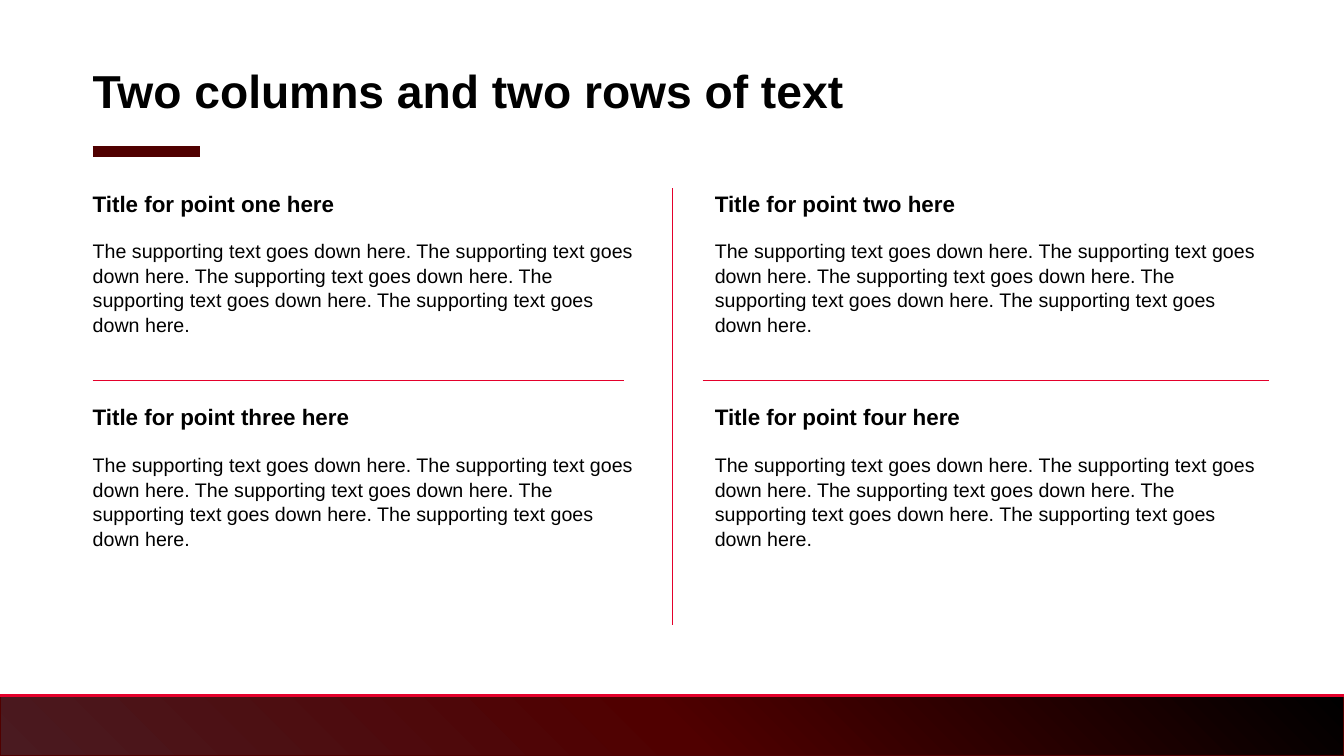
from copy import deepcopy

from lxml.etree import SubElement
from pptx import Presentation
from pptx.dml.color import RGBColor
from pptx.enum.shapes import MSO_CONNECTOR, MSO_SHAPE
from pptx.enum.text import MSO_ANCHOR
from pptx.oxml.ns import qn
from pptx.util import Inches, Pt

COLORS = {"text": "000000", "maroon": "500000", "plum": "4A1A20", "red": "E4002B"}
FONT = "Arial"
WIDTH, HEIGHT = 13.33, 7.5
LEFT = 0.92
COLUMNS = (LEFT, 7.09)
ROWS = (1.87, 3.99)
COLUMN_WIDTH = 5.37
BAND_TOP = 6.9
POINTS = ("one", "two", "three", "four")
SUPPORTING_TEXT = " ".join(["The supporting text goes down here."] * 5)


def color(name):
    return RGBColor.from_string(COLORS[name])


def add_text(slide, text, left, top, width, height, size, bold=False, spacing=1.05):
    text_frame = slide.shapes.add_textbox(
        Inches(left), Inches(top), Inches(width), Inches(height)
    ).text_frame
    text_frame.margin_left = text_frame.margin_right = 0
    text_frame.margin_top = text_frame.margin_bottom = 0
    text_frame.word_wrap = True
    text_frame.vertical_anchor = MSO_ANCHOR.TOP
    text_frame.text = text
    paragraph = text_frame.paragraphs[0]
    paragraph.line_spacing = spacing
    font = paragraph.runs[0].font
    font.name, font.size, font.bold = FONT, Pt(size), bold
    font.color.rgb = color("text")


def add_line(slide, start, end, line_color, width):
    connector = slide.shapes.add_connector(
        MSO_CONNECTOR.STRAIGHT,
        Inches(start[0]), Inches(start[1]), Inches(end[0]), Inches(end[1]),
    )
    connector.line.color.rgb = color(line_color)
    connector.line.width = Pt(width)
    SubElement(connector._element.spPr, qn("a:effectLst"))


def add_footer_band(slide):
    shape = slide.shapes.add_shape(
        MSO_SHAPE.RECTANGLE,
        0, Inches(BAND_TOP), Inches(WIDTH), Inches(HEIGHT - BAND_TOP),
    )
    shape.shadow.inherit = False
    shape.line.color.rgb = color("maroon")
    shape.line.width = Pt(1.5)
    shape.fill.gradient()
    shape.fill.gradient_angle = 225
    # The default gradient has two stops; add a third
    stop_list = shape._element.spPr.find(qn("a:gradFill")).find(qn("a:gsLst"))
    stop_list.append(deepcopy(stop_list[-1]))
    names = ("text", "maroon", "plum")
    for stop, name, position in zip(shape.fill.gradient_stops, names, (0, 0.5, 1)):
        stop.color.rgb = color(name)
        stop.position = position
    add_line(slide, (0, BAND_TOP), (WIDTH, BAND_TOP), "red", 1.5)


def add_point(slide, number, left, top):
    add_text(slide, f"Title for point {number} here",
             left, top, COLUMN_WIDTH, 0.46, 16, bold=True)
    add_text(slide, SUPPORTING_TEXT, left, top + 0.49, COLUMN_WIDTH, 1.15, 14)


def main():
    presentation = Presentation()
    presentation.slide_width = Inches(WIDTH)
    presentation.slide_height = Inches(HEIGHT)
    slide = presentation.slides.add_slide(presentation.slide_layouts[6])

    # Frame: accent bar, footer band and title
    add_line(slide, (LEFT, 1.5), (1.98, 1.5), "maroon", 8)
    add_footer_band(slide)
    add_text(slide, "Two columns and two rows of text",
             LEFT, 0.68, 11.5, 0.79, 33, bold=True, spacing=0.9)

    # Points, filled row by row
    for index, number in enumerate(POINTS):
        row, column = divmod(index, len(COLUMNS))
        add_point(slide, number, COLUMNS[column], ROWS[row])

    # Dividers between the points
    for start, end in (
        ((LEFT, 3.77), (6.19, 3.77)),
        ((6.97, 3.77), (12.59, 3.77)),
        ((6.67, 1.87), (6.67, 6.2)),
    ):
        add_line(slide, start, end, "red", 0.5)

    presentation.save("out.pptx")


if __name__ == "__main__":
    main()
